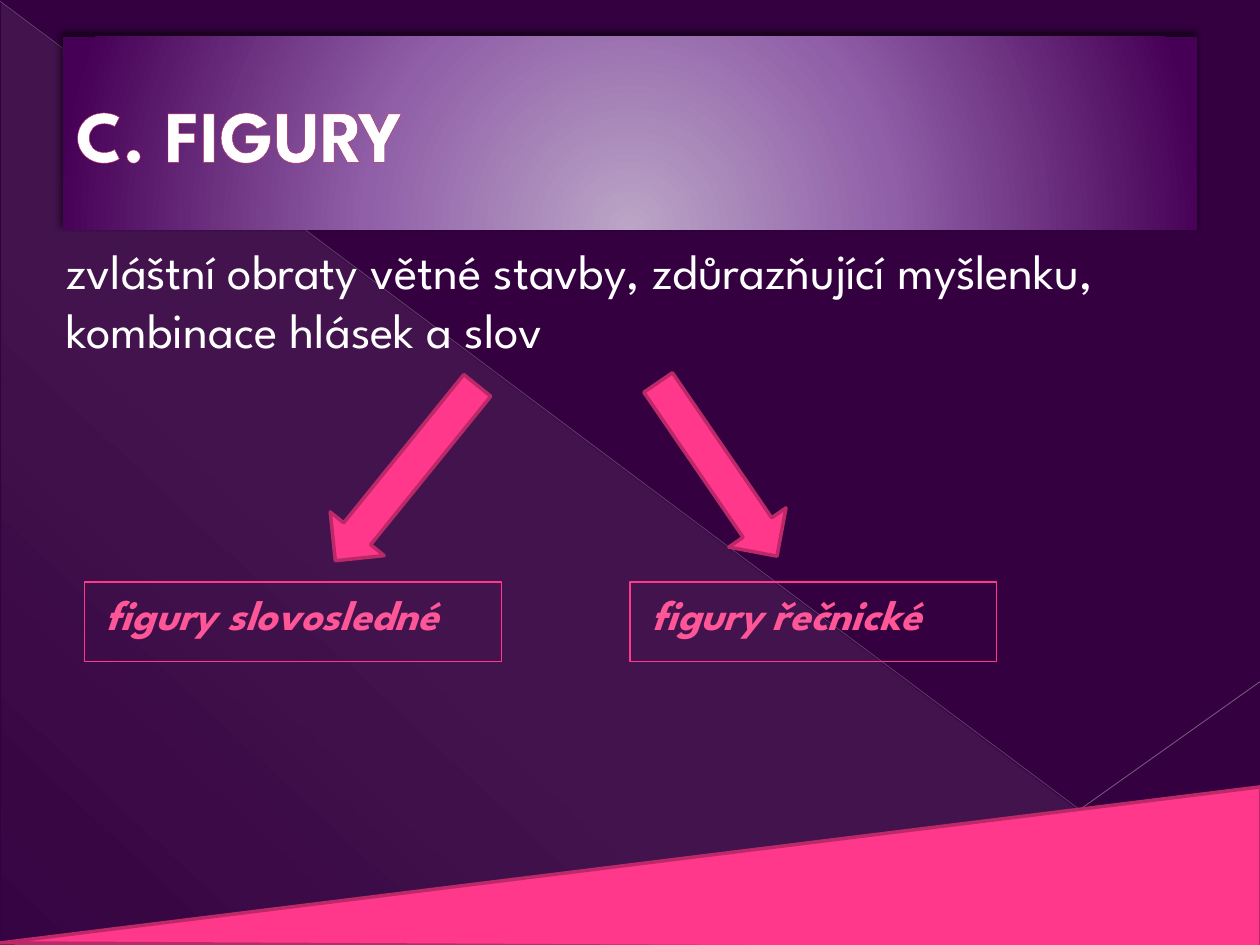
from dataclasses import dataclass

from lxml import etree
from pptx import Presentation
from pptx import util as u
from pptx.dml import color
from pptx.enum import shapes, text
from pptx.oxml import ns

PX = 9144  # EMU per px, 100 px to the inch
FONT = "League Spartan"
COLORS = {
    "background": "340040",
    "white": "FFFFFF",
    "pink": "FF388C",
    "pink_text": "FF5698",
    "pink_edge": "BD2968",
    "title_edge": "B12761",
    "veil": "D2D2D2",
    "long_line": "BFBFBF",
    "short_line": "C6C6C6",
    "glow": "BBA5C6",
    "violet": "905FA8",
    "plum": "460055",
    "shadow": "000000",
}


@dataclass
class Box:
    left: int
    top: int
    width: int
    height: int

    def emu(self) -> list:
        return [u.Emu(n * PX) for n in (self.left, self.top, self.width, self.height)]


@dataclass
class Figure:
    """A pink preset shape with a darker edge."""
    kind: shapes.MSO_SHAPE
    box: Box
    rotation: float


@dataclass
class Ray:
    """A faint background line."""
    start: tuple
    end: tuple
    color: str
    width: float
    opacity: int


@dataclass
class Label:
    box: Box
    wording: str


def rgb(name: str) -> color.RGBColor:
    return color.RGBColor.from_string(COLORS[name])


def add_node(parent, tag: str, **attributes):
    node = etree.SubElement(parent, ns.qn(tag))
    for key, value in attributes.items():
        node.set(key, str(value))
    return node


def add_color(parent, name: str, opacity: int = 100) -> None:
    node = add_node(parent, "a:srgbClr", val=COLORS[name])
    if opacity < 100:
        add_node(node, "a:alpha", val=opacity * 1000)


def set_gradient(shape, stops: list):
    """Fill with (position, colour, opacity) stops; the caller adds the direction."""
    shape.fill.background()
    empty = shape.element.spPr.find(ns.qn("a:noFill"))
    gradient = etree.Element(ns.qn("a:gradFill"), rotWithShape="1")
    stop_list = add_node(gradient, "a:gsLst")
    for position, name, opacity in stops:
        add_color(add_node(stop_list, "a:gs", pos=position * 1000), name, opacity)
    empty.getparent().replace(empty, gradient)
    return gradient


def place(shape, box: Box) -> None:
    shape.left, shape.top, shape.width, shape.height = box.emu()


def bring_to_front(shape) -> None:
    shape.element.getparent().append(shape.element)


def set_text(shape, wording: str, *, size: int, color_name: str = "white",
             bold: bool = False, italic: bool = False,
             anchor=text.MSO_ANCHOR.TOP, auto_size=text.MSO_AUTO_SIZE.NONE):
    frame = shape.text_frame
    frame.word_wrap = True
    frame.auto_size = auto_size
    frame.vertical_anchor = anchor
    paragraph = frame.paragraphs[0]
    paragraph.alignment = text.PP_ALIGN.LEFT
    run = paragraph.add_run()
    run.text = wording
    run.font.name, run.font.size = FONT, u.Pt(size)
    run.font.bold, run.font.italic = bold, italic
    run.font.color.rgb = rgb(color_name)
    return paragraph


def draw_ray(slide, ray: Ray) -> None:
    points = [u.Emu(n * PX) for n in (*ray.start, *ray.end)]
    line = slide.shapes.add_connector(shapes.MSO_CONNECTOR.STRAIGHT, *points)
    line.line.width = u.Pt(ray.width)
    line.line.color.rgb = rgb(ray.color)
    properties = line.element.spPr
    add_node(properties.find(".//" + ns.qn("a:srgbClr")), "a:alpha", val=ray.opacity * 1000)
    add_node(properties, "a:effectLst")


def draw_figure(slide, figure: Figure):
    shape = slide.shapes.add_shape(figure.kind, *figure.box.emu())
    shape.rotation = figure.rotation
    shape.shadow.inherit = False
    shape.fill.solid()
    shape.fill.fore_color.rgb = rgb("pink")
    shape.line.color.rgb = rgb("pink_edge")
    shape.line.width = u.Pt(2)
    return shape


def draw_title(shape, wording: str) -> None:
    place(shape, Box(50, 29, 900, 153))
    gradient = set_gradient(shape, [(0, "glow", 100), (46, "violet", 100), (100, "plum", 100)])
    circle = add_node(gradient, "a:path", path="circle")
    add_node(circle, "a:fillToRect", l=50000, t=155000, r=50000, b=-55000)
    effects = add_node(shape.element.spPr, "a:effectLst")
    shadow = add_node(effects, "a:outerShdw", blurRad=u.Pt(4), dist=u.Pt(3),
                      dir=245 * 60000, rotWithShape=0)
    add_color(shadow, "shadow", 60)
    paragraph = set_text(shape, wording, size=42, bold=True, anchor=text.MSO_ANCHOR.MIDDLE)
    outline = etree.Element(ns.qn("a:ln"), w=str(u.Pt(0.5)))
    add_color(add_node(outline, "a:solidFill"), "title_edge")
    paragraph.runs[0].font._element.insert(0, outline)
    bring_to_front(shape)


def draw_label(shape, label: Label) -> None:
    place(shape, label.box)
    shape.line.color.rgb = rgb("pink")
    shape.line.width = u.Pt(0.75)
    paragraph = set_text(shape, label.wording, size=24, color_name="pink_text",
                         bold=True, italic=True)
    paragraph.space_before = u.Pt(4.8)
    properties = paragraph._p.get_or_add_pPr()
    properties.set("marL", str(49 * PX))
    properties.set("indent", str(-42 * PX))
    add_node(properties, "a:buNone")
    bring_to_front(shape)


RAYS = [
    Ray((0, 1), (999, 749), "long_line", 0.39, 35),
    Ray((1000, 541), (707, 749), "short_line", 0.47, 45),
]
LABELS = [
    Label(Box(67, 462, 331, 63), "figury slovosledné"),
    Label(Box(500, 462, 291, 63), "figury řečnické"),
]
WEDGE = Figure(shapes.MSO_SHAPE.ISOSCELES_TRIANGLE, Box(436, 189, 129, 1000), 270)
ARROWS = [
    Figure(shapes.MSO_SHAPE.DOWN_ARROW, Box(295, 286, 55, 179), 39),
    Figure(shapes.MSO_SHAPE.DOWN_ARROW, Box(542, 289, 55, 167), 325.6),
]


def main() -> None:
    presentation = Presentation()
    presentation.slide_width, presentation.slide_height = 1000 * PX, 750 * PX
    slide = presentation.slides.add_slide(presentation.slide_layouts[3])
    title, *bodies = slide.placeholders

    # Background
    slide.background.fill.solid()
    slide.background.fill.fore_color.rgb = rgb("background")
    veil = slide.shapes.add_shape(shapes.MSO_SHAPE.RIGHT_TRIANGLE, *Box(1, 2, 998, 748).emu())
    veil.shadow.inherit = False
    veil.line.fill.background()
    gradient = set_gradient(veil, [(0, "veil", 10), (70, "veil", 8), (100, "veil", 1)])
    add_node(gradient, "a:lin", ang=133 * 60000, scaled=0)
    for ray in RAYS:
        draw_ray(slide, ray)
    draw_figure(slide, WEDGE).adjustments[0] = 0.04

    # Title and definition
    draw_title(title, "C. FIGURY")
    definition = slide.shapes.add_textbox(*Box(43, 186, 913, 104).emu())
    set_text(definition, "zvláštní obraty větné stavby, zdůrazňující myšlenku, "
             "kombinace hlásek a slov", size=28,
             auto_size=text.MSO_AUTO_SIZE.SHAPE_TO_FIT_TEXT)

    # The two kinds of figures
    for body, label in zip(bodies, LABELS):
        draw_label(body, label)
    for arrow in ARROWS:
        draw_figure(slide, arrow)

    presentation.save("out.pptx")


if __name__ == "__main__":
    main()
